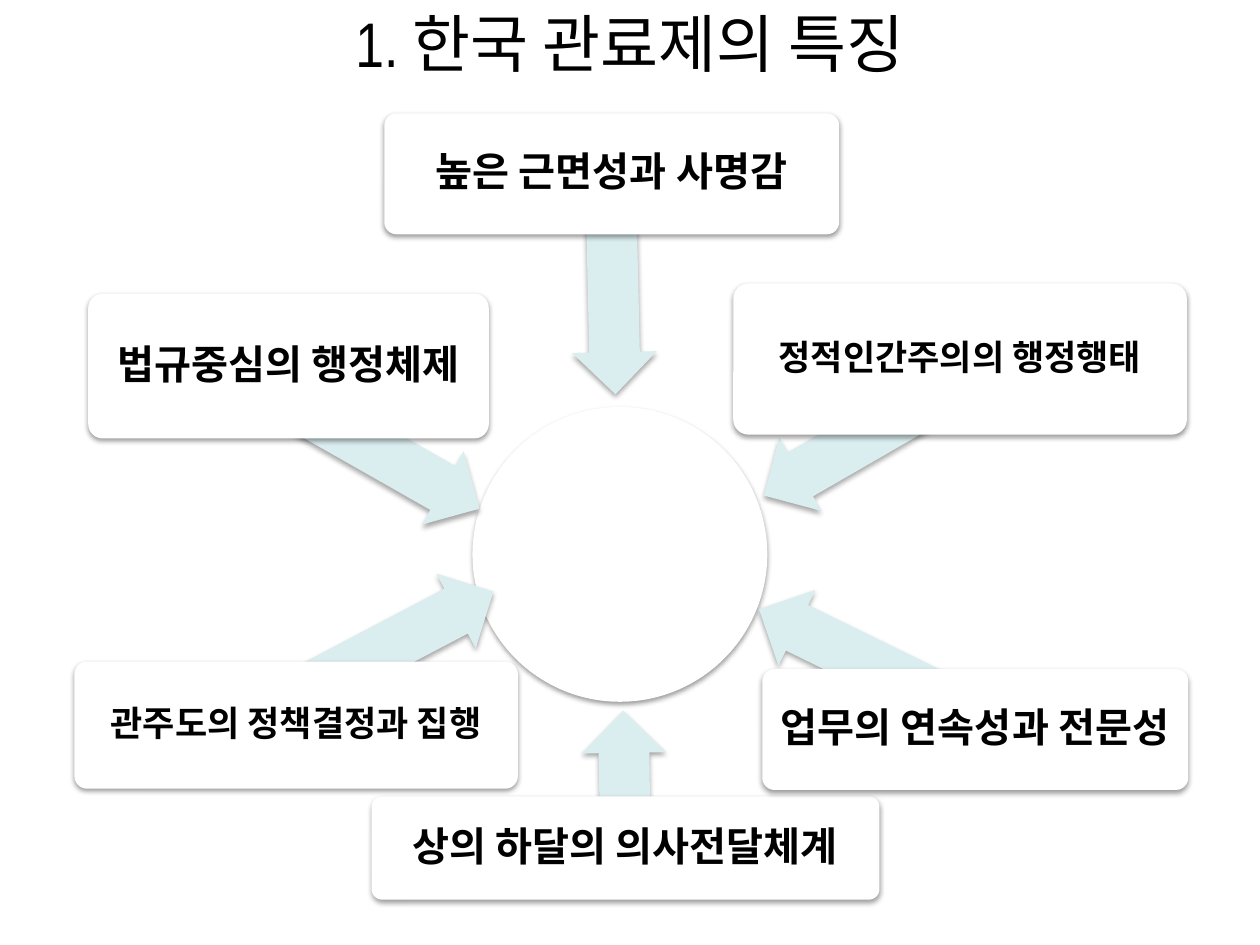
from dataclasses import dataclass

from lxml import etree
from pptx import Presentation
from pptx.dml.color import RGBColor
from pptx.enum.shapes import MSO_SHAPE
from pptx.enum.text import MSO_ANCHOR, PP_ALIGN
from pptx.oxml.ns import qn
from pptx.util import Inches, Pt

ARROW = MSO_SHAPE.LEFT_ARROW
CARD = MSO_SHAPE.ROUNDED_RECTANGLE
CIRCLE = MSO_SHAPE.OVAL
CENTER = PP_ALIGN.CENTER
MIDDLE = MSO_ANCHOR.MIDDLE

COLORS = {"white": "FFFFFF", "arrow": "DAEDEF", "text": "000000", "shadow": "000000"}
BODY_FONT = "Noto Sans CJK KR"
TITLE_FONT = "Arial Narrow"
COLUMNS, ROWS = 100, 75
SLIDE_WIDTH, SLIDE_HEIGHT = Inches(10), Inches(7.5)
ARROW_ROWS = 6.7


@dataclass(frozen=True)
class Area:
    column: float
    row: float
    columns: float
    rows: float

    def lengths(self) -> tuple[int, int, int, int]:
        return (
            round(self.column * SLIDE_WIDTH / COLUMNS),
            round(self.row * SLIDE_HEIGHT / ROWS),
            round(self.columns * SLIDE_WIDTH / COLUMNS),
            round(self.rows * SLIDE_HEIGHT / ROWS),
        )


@dataclass(frozen=True)
class Trait:
    text: str
    size: int
    card: Area
    arrow: Area
    angle: float


TRAITS = [
    Trait("상의 하달의 의사전달체계", 23, Area(29.5, 63.2, 40.3, 8.2),
          Area(44.1, 58.5, 10.9, ARROW_ROWS), 89.1),
    Trait("관주도의 정책결정과 집행", 20, Area(5.9, 52.5, 35.2, 10.1),
          Area(23.7, 47.4, 16.4, ARROW_ROWS), 152.3),
    Trait("법규중심의 행정체제", 23, Area(7, 23.3, 31.8, 11.5),
          Area(21.7, 32.7, 17.5, ARROW_ROWS), 209.6),
    Trait("높은 근면성과 사명감", 23, Area(30.5, 9, 36.1, 9.6),
          Area(39.9, 19.2, 17.5, ARROW_ROWS), 268.7),
    Trait("정적인간주의의 행정행태", 20, Area(58.2, 22.5, 36, 12),
          Area(59.4, 31.4, 18.3, ARROW_ROWS), 330),
    Trait("업무의 연속성과 전문성", 23, Area(60.5, 53.1, 33.8, 9.6),
          Area(59.3, 49.1, 18.6, ARROW_ROWS), 26.1),
]


def add_shadow(shape, distance: float, opacity: int) -> None:
    shape.shadow.inherit = False
    effects = shape._element.spPr.find(qn("a:effectLst"))
    shadow = etree.SubElement(
        effects, qn("a:outerShdw"), blurRad=str(Pt(3.1)), dist=str(Pt(distance)),
        dir=str(90 * 60000), rotWithShape="0",
    )
    color = etree.SubElement(shadow, qn("a:srgbClr"), val=COLORS["shadow"])
    etree.SubElement(color, qn("a:alpha"), val=str(opacity * 1000))


def add_figure(page, kind, area: Area, color: str, distance: float = 1.6, opacity: int = 38):
    shape = page.shapes.add_shape(kind, *area.lengths())
    shape.fill.solid()
    shape.fill.fore_color.rgb = RGBColor.from_string(COLORS[color])
    shape.line.fill.background()
    add_shadow(shape, distance, opacity)
    return shape


def write_text(box, text: str, font: str, size: int, bold: bool):
    frame = box.text_frame
    frame.word_wrap = True
    frame.vertical_anchor = MIDDLE
    para = frame.paragraphs[0]
    para.alignment = CENTER
    span = para.add_run()
    span.text = text
    span.font.name = font
    span.font.size = Pt(size)
    span.font.bold = bold
    span.font.color.rgb = RGBColor.from_string(COLORS["text"])
    etree.SubElement(span.font._element, qn("a:ea"), typeface=BODY_FONT)
    return para


def add_trait(page, trait: Trait) -> None:
    arrow = add_figure(page, ARROW, trait.arrow, "arrow", 1.8, 35)
    arrow.adjustments[0] = 0.6
    arrow.adjustments[1] = 0.5
    arrow.rotation = trait.angle

    card = add_figure(page, CARD, trait.card, "white")
    card.adjustments[0] = 0.1
    frame = card.text_frame
    frame.margin_left = frame.margin_right = Inches(0.05)
    frame.margin_top = frame.margin_bottom = Inches(0.05)
    para = write_text(card, trait.text, BODY_FONT, trait.size, True)
    para.line_spacing = 0.9


def main() -> None:
    deck = Presentation()
    deck.slide_width, deck.slide_height = SLIDE_WIDTH, SLIDE_HEIGHT
    page = deck.slides.add_slide(deck.slide_layouts.get_by_name("Title Only"))

    title = page.shapes.title
    title.left, title.top, title.width, title.height = Area(0, 0, COLUMNS, 6.7).lengths()
    write_text(title, "1. 한국 관료제의 특징", TITLE_FONT, 36, False)

    add_figure(page, CIRCLE, Area(37.5, 32.3, 23.4, 23.4), "white")
    for trait in TRAITS:
        add_trait(page, trait)

    deck.save("out.pptx")


if __name__ == "__main__":
    main()
